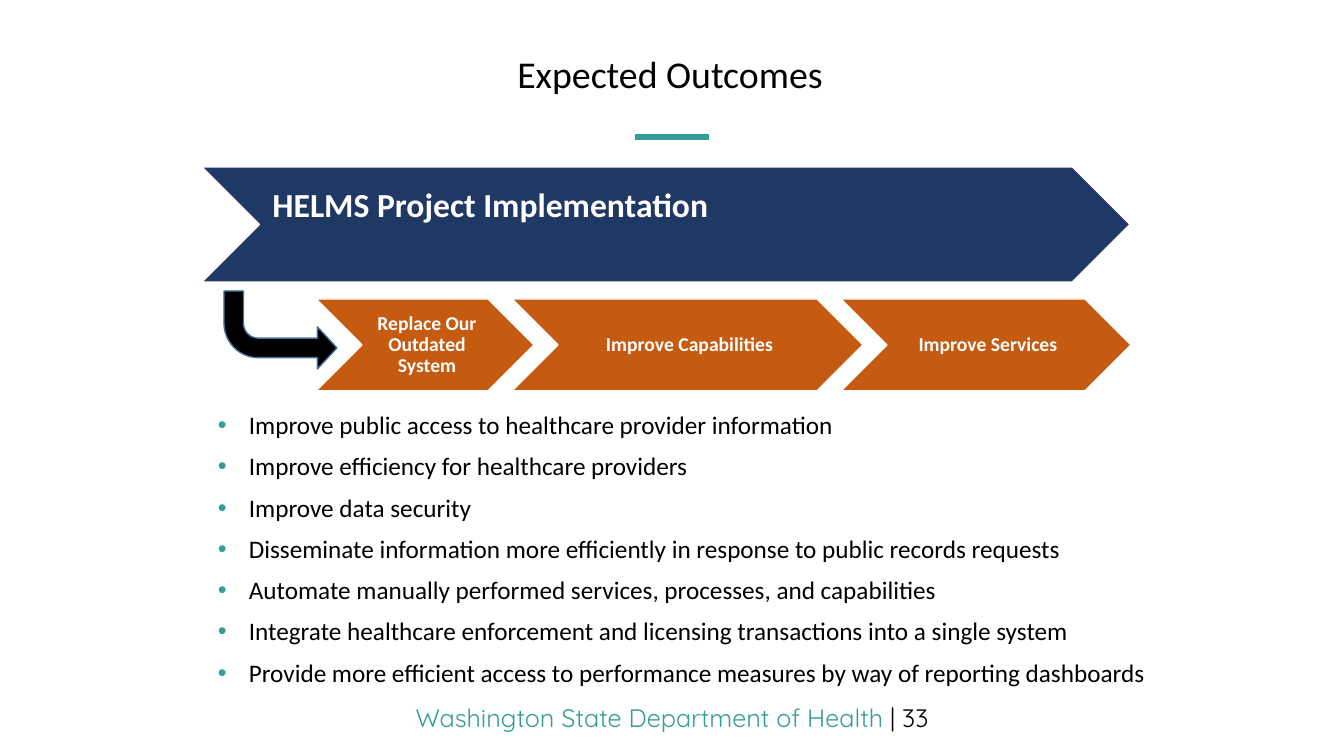
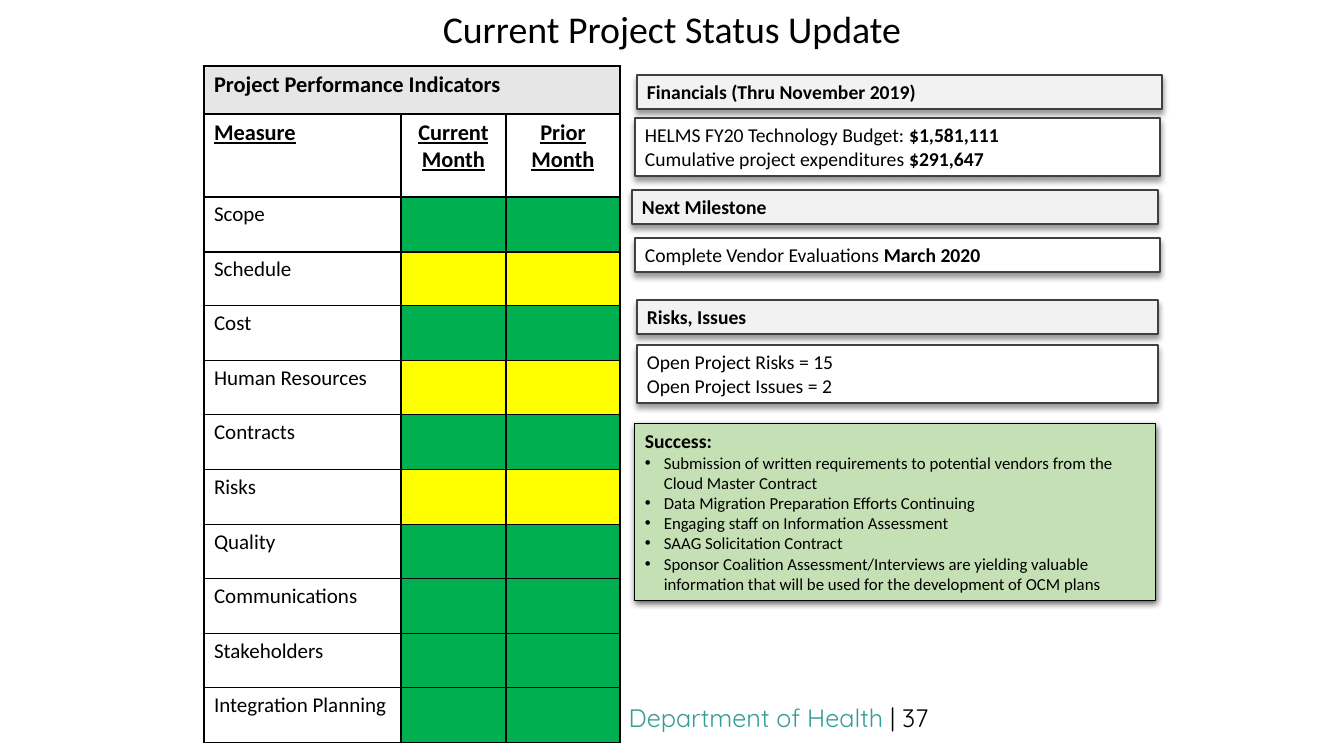
from dataclasses import dataclass

from lxml import etree
from pptx import Presentation
from pptx import util as u
from pptx.dml.color import RGBColor
from pptx.enum import shapes, text
from pptx.oxml import ns

PX = 914400 / 100.8


@dataclass(frozen=True)
class Theme:
    body_font: str = "Calibri"
    footer_font: str = "Quicksand"
    black: str = "000000"
    white: str = "FFFFFF"
    teal: str = "349D96"
    navy: str = "203864"
    orange: str = "C55A11"
    arrow_line: str = "43739E"
    table_head: str = "E7E6E6"
    green: str = "00B050"
    yellow: str = "FFFF00"
    heading_fill: str = "F2F2F2"
    box_line: str = "404040"
    success_fill: str = "C5E0B4"
    title_size: int = 27
    banner_size: int = 24
    list_size: int = 18
    table_head_size: int = 16
    table_size: int = 15
    box_size: int = 14
    small_size: int = 12


theme = Theme()
LEFT, CENTER = text.PP_ALIGN.LEFT, text.PP_ALIGN.CENTER
TOP, MIDDLE = text.MSO_ANCHOR.TOP, text.MSO_ANCHOR.MIDDLE


def write(frame, paragraphs, size, color=theme.black, font=theme.body_font, bold=False,
          underline=False, align=LEFT, anchor=TOP, line=1.0, before=0, insets=None,
          bullet=None, indent=0, append=False):
    frame.word_wrap = True
    frame.vertical_anchor = anchor
    if insets:
        sides = ("margin_left", "margin_top", "margin_right", "margin_bottom")
        for side, inset in zip(sides, insets):
            setattr(frame, side, u.Emu(round(inset * PX)))
    for index, runs in enumerate(paragraphs):
        first = index == 0 and not append
        para = frame.paragraphs[0] if first else frame.add_paragraph()
        para.alignment = align
        para.line_spacing = line
        para.space_before = u.Pt(0 if first else before)
        if bullet:
            props = para._p.get_or_add_pPr()
            props.set("marL", str(round(indent * PX)))
            props.set("indent", str(-round(indent * PX)))
            bullet_color = etree.SubElement(props, ns.qn("a:buClr"))
            etree.SubElement(bullet_color, ns.qn("a:srgbClr"), val=bullet)
            etree.SubElement(props, ns.qn("a:buFont"), typeface="Arial")
            etree.SubElement(props, ns.qn("a:buChar"), char="•")
        for words, changes in [(runs, {})] if isinstance(runs, str) else runs:
            span = para.add_run()
            span.text = words
            span.font.name = font
            span.font.size = u.Pt(size)
            span.font.bold = changes.get("bold", bold)
            span.font.underline = underline
            span.font.color.rgb = RGBColor.from_string(changes.get("color", color))


def draw(page, kind, left, top, width, height, fill, line, weight, shadow=None):
    box = page.shapes.add_shape(kind, *[round(n * PX) for n in (left, top, width, height)])
    box.fill.solid()
    box.fill.fore_color.rgb = RGBColor.from_string(fill)
    box.line.color.rgb = RGBColor.from_string(line)
    box.line.width = u.Pt(weight)
    box.shadow.inherit = False
    if shadow:
        opacity, blur, distance = shadow
        effects = box._element.spPr.find(ns.qn("a:effectLst"))
        outer = etree.SubElement(effects, ns.qn("a:outerShdw"), blurRad=str(u.Pt(blur)),
                                 dist=str(u.Pt(distance)), dir="5400000", rotWithShape="0")
        tint = etree.SubElement(outer, ns.qn("a:srgbClr"), val=theme.black)
        etree.SubElement(tint, ns.qn("a:alpha"), val=str(opacity * 1000))
    return box


deck = Presentation()
deck.slide_width, deck.slide_height = round(1344 * PX), round(756 * PX)

pages = []
for heading, left, top, number in [
    ("Expected Outcomes", 166, 50, 33),
    ("Current Project Status Update", 168, 5, 37),
]:
    page = deck.slides.add_slide(deck.slide_layouts[5])
    title = page.shapes.title
    title.left, title.top, title.width, title.height = [
        round(n * PX) for n in (left, top, 1008, 53)]
    write(title.text_frame, [heading], theme.title_size, align=CENTER, anchor=MIDDLE, line=0.9)
    accent = page.shapes.add_connector(
        shapes.MSO_CONNECTOR.STRAIGHT, *[round(n * PX) for n in (635, 137, 709, 137)])
    accent.line.color.rgb = RGBColor.from_string(theme.teal)
    accent.line.width = u.Pt(4)
    etree.SubElement(accent._element.spPr, ns.qn("a:effectLst"))
    footer = page.shapes.add_textbox(*[round(n * PX) for n in (0, 697, 1344, 40)])
    write(footer.text_frame,
          [[("Washington State Department of Health ", {}),
            (f"| {number}", {"color": theme.black})]],
          theme.list_size, color=theme.teal, font=theme.footer_font, align=CENTER)
    pages.append(page)
outcomes, status = pages

CHEVRON = shapes.MSO_SHAPE.CHEVRON
banner = draw(outcomes, CHEVRON, 202, 167, 928, 115, theme.navy, theme.white, 1)
write(banner.text_frame, ["HELMS Project Implementation"], theme.banner_size,
      color=theme.white, bold=True, line=0.9, insets=(13, 22, 4, 4))

for label, left, width in [
    ("Replace Our Outdated System", 316, 218),
    ("Improve Capabilities", 512, 351),
    ("Improve Services", 841, 290),
]:
    step = draw(outcomes, CHEVRON, left, 299, width, 92, theme.orange, theme.white, 1)
    write(step.text_frame, [label], theme.box_size, color=theme.white, bold=True,
          align=CENTER, anchor=MIDDLE, line=0.9, insets=(6, 2, 2, 2))

arrow = draw(outcomes, shapes.MSO_SHAPE.BENT_ARROW, 224, 291, 113, 78,
             theme.black, theme.arrow_line, 1)
for index, value in enumerate((0.25, 0.27, 0.25, 0.44)):
    arrow.adjustments[index] = value
arrow._element.spPr.find(ns.qn("a:xfrm")).set("flipV", "1")

goals = outcomes.shapes.add_textbox(*[round(n * PX) for n in (208, 408, 966, 284)])
write(goals.text_frame, [
    "Improve public access to healthcare provider information",
    "Improve efficiency for healthcare providers",
    "Improve data security",
    "Disseminate information more efficiently in response to public records requests",
    "Automate manually performed services, processes, and capabilities",
    "Integrate healthcare enforcement and licensing transactions into a single system",
    "Provide more efficient access to performance measures by way of reporting dashboards",
], theme.list_size, line=0.9, before=10, bullet=theme.teal, indent=31)

measures = [
    ("Scope", theme.green),
    ("Schedule", theme.yellow),
    ("Cost", theme.green),
    ("Human Resources", theme.yellow),
    ("Contracts", theme.green),
    ("Risks", theme.yellow),
    ("Quality", theme.green),
    ("Communications", theme.green),
    ("Stakeholders", theme.green),
    ("Integration Planning", theme.green),
]
table = status.shapes.add_table(
    len(measures) + 2, 3, *[round(n * PX) for n in (204, 66, 416, 677)]).table
table.first_row = table.horz_banding = False
for column, width in zip(table.columns, (197, 105, 114)):
    column.width = round(width * PX)
edges = [round(546 * step / len(measures)) for step in range(len(measures) + 1)]
heights = [48, 83] + [low - high for high, low in zip(edges, edges[1:])]
for row, height in zip(table.rows, heights):
    row.height = round(height * PX)

fills = [[theme.table_head] * 3, [theme.white] * 3]
fills += [[theme.white, color, color] for _, color in measures]
for row, colors in zip(table.rows, fills):
    for cell, color in zip(row.cells, colors):
        props = cell._tc.get_or_add_tcPr()
        for side in ("a:lnL", "a:lnR", "a:lnT", "a:lnB"):
            border = etree.SubElement(props, ns.qn(side), w=str(u.Pt(1)))
            paint = etree.SubElement(border, ns.qn("a:solidFill"))
            etree.SubElement(paint, ns.qn("a:srgbClr"), val=theme.black)
        cell.fill.solid()
        cell.fill.fore_color.rgb = RGBColor.from_string(color)

table.cell(0, 0).merge(table.cell(0, 2))
write(table.cell(0, 0).text_frame, ["Project Performance Indicators"],
      theme.table_head_size, bold=True)
for index, label in enumerate(("Measure", "Current Month", "Prior Month")):
    write(table.cell(1, index).text_frame, [label], theme.table_head_size, bold=True,
          underline=True, align=CENTER if index else LEFT)
for index, (label, _) in enumerate(measures, 2):
    write(table.cell(index, 0).text_frame, [label], theme.table_size)

RECTANGLE = shapes.MSO_SHAPE.RECTANGLE
STRONG = {"bold": True}
for is_heading, left, top, width, height, paragraphs in [
    (True, 637, 75, 525, 34, ["Financials (Thru November 2019)"]),
    (False, 635, 118, 525, 58, [
        [("HELMS FY20 Technology Budget: ", {}), ("$1,581,111", STRONG)],
        [("Cumulative project expenditures ", {}), ("$291,647", STRONG)]]),
    (True, 632, 190, 526, 34, ["Next Milestone"]),
    (False, 635, 238, 525, 34, [
        [("Complete Vendor Evaluations ", {}), ("March 2020", STRONG)]]),
    (True, 637, 300, 521, 34, ["Risks, Issues"]),
    (False, 637, 345, 521, 58, ["Open Project Risks = 15", "Open Project Issues = 2"]),
]:
    box = draw(status, RECTANGLE, left, top, width, height,
               theme.heading_fill if is_heading else theme.white, theme.box_line,
               1.5 if is_heading else 1, shadow=(40, 4, 3))
    write(box.text_frame, paragraphs, theme.box_size, bold=is_heading)

success = draw(status, RECTANGLE, 635, 424, 521, 177, theme.success_fill, theme.black, 0.75,
               shadow=(63, 4.5, 1.5))
write(success.text_frame, ["Success:"], theme.box_size, bold=True)
write(success.text_frame, [
    "Submission of written requirements to potential vendors from the Cloud Master Contract",
    "Data Migration Preparation Efforts Continuing",
    "Engaging staff on Information Assessment",
    "SAAG Solicitation Contract",
    "Sponsor Coalition Assessment/Interviews are yielding valuable information "
    "that will be used for the development of OCM plans",
], theme.small_size, bullet=theme.black, indent=19, append=True)

deck.save("out.pptx")
